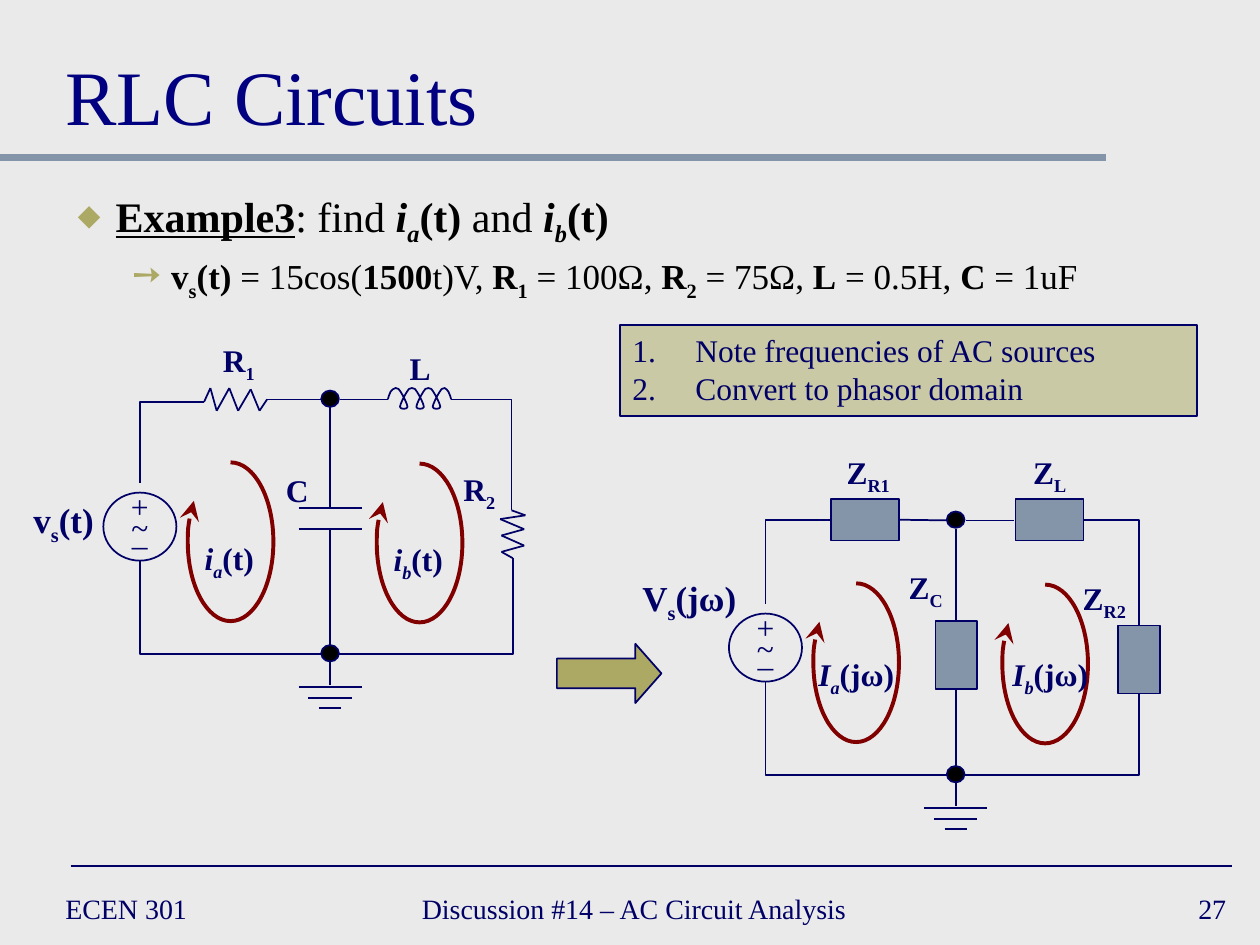
from dataclasses import dataclass
from itertools import pairwise
from math import cos, radians, sin, tan
from typing import Any, NamedTuple

from lxml.etree import SubElement
from pptx import Presentation
from pptx.dml.color import RGBColor
from pptx.enum.shapes import MSO_CONNECTOR as Link, MSO_SHAPE as Kind
from pptx.enum.text import MSO_ANCHOR as Anchor, MSO_AUTO_SIZE as Fit, PP_ALIGN as Align
from pptx.oxml.ns import qn
from pptx.util import Inches, Pt

NAVY = RGBColor(0x00, 0x00, 0x66)
BLUE = RGBColor(0x00, 0x00, 0x80)
STEEL = RGBColor(0x84, 0x95, 0xA9)
OLIVE = RGBColor(0xAC, 0xA9, 0x64)
RED = RGBColor(0x80, 0x00, 0x00)
BLACK = RGBColor(0x00, 0x00, 0x00)
PALE = RGBColor(0xEA, 0xEA, 0xEA)
COLS, ROWS = 100, 75
CELL = Inches(0.1)
MARKS = {"b": ("bold", True), "i": ("italic", True), "u": ("underline", True)}

Point = tuple[float, float]
# Half a coil turn, from its peak down to the foot on the left
FALL = [(-0.2, 0), (-0.3, 0.1), (-0.4, 0.3), (-0.6, 0.6), (-0.95, 1.3), (-0.95, 1.5)]


class Run(NamedTuple):
    text: str
    marks: str = ""


class Label(NamedTuple):
    x: float
    y: float
    w: float
    runs: list[Run]
    size: float = 18


def sym(head: str, sub: str, tail: str = "", slant: str = "") -> list[Run]:
    """Bold symbol with a subscript; slant "i" makes head and subscript italic."""
    runs = [Run(head, "b" + slant), Run(sub, "bs" + slant)]
    return runs + [Run(tail, "b")] if tail else runs


def write(para: Any, runs: list[Run], size: float = 18, color: RGBColor = NAVY, **form: Any) -> None:
    for key, value in form.items():
        setattr(para, key, value)
    for text, marks in runs:
        run = para.add_run()
        run.text = text
        look = dict(MARKS[m] for m in marks if m in MARKS)
        for key, value in {"name": "Times New Roman", "size": Pt(size), **look}.items():
            setattr(run.font, key, value)
        run.font.color.rgb = color
        if "s" in marks:
            run.font._element.set("baseline", "-25000")


def bullet(para: Any, left: float, hang: float, char: str = "", share: int = 100) -> None:
    """Hang the paragraph on a coloured character, or on a number if none is given."""
    props = para._p.get_or_add_pPr()
    props.set("marL", str(Inches(left)))
    props.set("indent", str(-Inches(hang)))
    if char:
        tint = SubElement(props, qn("a:buClr"))
        SubElement(tint, qn("a:srgbClr"), val=str(OLIVE))
        SubElement(props, qn("a:buSzPct"), val=str(share * 1000))
        SubElement(props, qn("a:buChar"), char=char)
    else:
        SubElement(props, qn("a:buAutoNum"), type="arabicPeriod")


@dataclass
class Pen:
    """Draws in grid cells, moved by dx columns and dy rows."""
    shapes: Any
    dx: float = 0
    dy: float = 0

    def at(self, x: float, y: float) -> tuple[int, int]:
        return round((x + self.dx) * CELL), round((y + self.dy) * CELL)

    def lines(self, *dots: Point, color: RGBColor = NAVY, width: float = 1) -> None:
        for a, b in pairwise(dots):
            link = self.shapes.add_connector(Link.STRAIGHT, *self.at(*a), *self.at(*b))
            link.line.color.rgb = color
            link.line.width = Pt(width)
            SubElement(link._element.spPr, qn("a:effectLst"))

    def trace(self, dots: list[Point], color: RGBColor = NAVY, width: float = 1) -> Any:
        first, *rest = [self.at(*dot) for dot in dots]
        maker = self.shapes.build_freeform(*first)
        maker.add_line_segments(rest, close=False)
        shape = maker.convert_to_shape()
        style(shape, None, color, width)
        return shape

    def curve(self, dots: list[Point], color: RGBColor = NAVY, width: float = 1) -> Any:
        """Bezier outline: a start, then two handles and an end for each part."""
        shape = self.trace(dots, color, width)
        route = shape._element.spPr.find(".//" + qn("a:path"))
        steps = route.findall(qn("a:lnTo"))
        for n in range(0, len(steps), 3):
            bend = SubElement(route, qn("a:cubicBezTo"))
            for step in steps[n:n + 3]:
                bend.append(step[0])
                route.remove(step)
        return shape

    def box(self, kind: Kind, x: float, y: float, w: float, h: float,
            fill: RGBColor | None = None) -> Any:
        shape = self.shapes.add_shape(kind, *self.at(x, y), round(w * CELL), round(h * CELL))
        style(shape, fill)
        return shape

    def text(self, x: float, y: float, w: float, h: float, **form: Any) -> Any:
        frame = self.shapes.add_textbox(*self.at(x, y), round(w * CELL), round(h * CELL)).text_frame
        for key, value in {"word_wrap": True, **form}.items():
            setattr(frame, key, value)
        return frame

    def label(self, x: float, y: float, w: float, *rows: list[Run], size: float = 18) -> None:
        frame = self.text(x, y, w, 1 + 3 * len(rows), word_wrap=False, auto_size=Fit.SHAPE_TO_FIT_TEXT)
        for n, runs in enumerate(rows):
            write(frame.add_paragraph() if n else frame.paragraphs[0], runs, size, alignment=Align.CENTER)


def style(shape: Any, fill: RGBColor | None, color: RGBColor = NAVY, width: float = 1) -> None:
    shape.shadow.inherit = False
    if fill is None:
        shape.fill.background()
    else:
        shape.fill.solid()
        shape.fill.fore_color.rgb = fill
    shape.line.color.rgb = color
    shape.line.width = Pt(width)


def mesh(pen: Pen, x: float, y: float) -> None:
    """Clockwise loop-current arrow round the centre x, y."""
    dots = [(x, y - 6.3)]
    for a, b in pairwise(map(radians, (-90, 0, 90, 180, 211))):
        k = 4 / 3 * tan((b - a) / 4)
        ring = ((cos(a) - k * sin(a), sin(a) + k * cos(a)),
                (cos(b) + k * sin(b), sin(b) - k * cos(b)), (cos(b), sin(b)))
        dots += [(x + 3.4 * c, y + 6.3 * s) for c, s in ring]
    line = pen.curve(dots, RED, 2.25)._element.spPr.find(qn("a:ln"))
    SubElement(line, qn("a:tailEnd"), type="stealth", w="lg", len="lg")


def coil(pen: Pen, x: float, y: float) -> None:
    """Inductor with four peaks, five cells long, drawn from its right end x."""
    top = y - 0.9
    dots = [(x, y), (x, y - 0.1), (x - 0.1, y - 0.4), (x - 0.2, y - 0.6),
            (x - 0.3, y - 0.7), (x - 0.4, top), (x - 0.5, top)]
    for n in range(3):
        peak = x - 0.5 - 1.3 * n
        dots += [(peak + a, top + b) for a, b in FALL]
        dots += [(peak - 0.95, top + 1.7), (peak - 0.35, top + 1.7)]
        dots += [(peak - 1.3 - a, top + b) for a, b in reversed(FALL)]
        dots.append((peak - 1.3, top))
    pen.curve(dots + [(2 * x - 5 - a, b) for a, b in reversed(dots[:6])])


def frame(pen: Pen) -> None:
    """Parts both circuits share: source, ground, nodes and mesh arrows."""
    pen.trace([(25.5, 51.9), (11.1, 51.9), (11.1, 44.5)])
    for half, y in (2.5, 54.5), (1.73, 55.4), (0.87, 56.2):
        pen.lines((26.2 - half, y), (26.2 + half, y))
    pen.lines((26.2, 51.9), (26.2, 54.4))
    pen.lines((27, 31.7), (30.8, 31.7))
    for y in 31, 51.2:
        pen.box(Kind.OVAL, 25.5, y, 1.4, 1.3, BLACK)
    pen.box(Kind.OVAL, 8.2, 39.1, 5.8, 5.4)
    pen.label(9.4, 38.2, 3.4, [Run("+")], [Run("–")])
    pen.label(9.4, 39.8, 3.4, [Run("~")])
    mesh(pen, 18.3, 43)
    mesh(pen, 33.3, 43.1)


def tag(pen: Pen, labels: list[Label]) -> None:
    for x, y, w, runs, size in labels:
        pen.label(x, y, w, runs, size=size)


def timed(pen: Pen) -> None:
    """Time-domain circuit."""
    frame(pen)
    pen.trace([(16.2, 31.9), (11.1, 31.9), (11.1, 38.3)])
    pen.lines((16.2, 31.9), (16.7, 30.8), (17.2, 32.6), (18.2, 30.8), (18.9, 32.6),
              (19.9, 30.9), (20.6, 32.6), (21.2, 31.7), (25.5, 31.7))
    coil(pen, 35.8, 31.7)
    pen.trace([(35.8, 31.7), (40.6, 31.7), (40.6, 40.5)])
    pen.lines((40.6, 40.5), (41.7, 40.9), (39.7, 41.2), (41.6, 42), (39.8, 42.5),
              (41.6, 43.3), (39.8, 43.8), (40.7, 44.3))
    pen.trace([(26.9, 51.9), (40.7, 51.9), (40.7, 44.3)])
    for y, end in (40.3, 32.3), (42, 51.2):
        pen.lines((23.7, y), (28.7, y))
        pen.lines((26.2, y), (26.2, end))
    tag(pen, [Label(16, 26.6, 5.3, sym(" R", "1")), Label(31.5, 27.2, 3.7, [Run("L", "b")]),
              Label(35.7, 36.8, 4.7, sym("R", "2")), Label(21.7, 36.9, 3.8, [Run("C", "b")]),
              Label(1.6, 39.1, 6.9, sym("v", "s", "(t)"), 20),
              Label(15.2, 42.3, 6, sym("i", "a", "(t)", "i")),
              Label(30.2, 42.4, 6, sym("i", "b", "(t)", "i"))])


def phasor(pen: Pen) -> None:
    """Phasor-domain circuit, with impedance blocks."""
    frame(pen)
    pen.trace([(16.3, 31.65), (11.1, 31.65), (11.1, 38.3)])
    pen.lines((21.7, 31.65), (25.5, 31.7))
    pen.trace([(36.4, 31.7), (40.75, 31.7), (40.75, 40.1)])
    pen.trace([(26.9, 51.9), (40.75, 51.9), (40.75, 45.4)])
    pen.lines((26.25, 32.4), (26.25, 39.7))
    pen.lines((26.25, 45.1), (26.25, 51.2))
    for x in 16.3, 30.95:
        pen.box(Kind.RECTANGLE, x, 30, 5.4, 3.3, STEEL)
    for x, y in (24.6, 39.7), (39.1, 40.05):
        pen.box(Kind.RECTANGLE, x, y, 3.3, 5.4, STEEL)
    tag(pen, [Label(15.8, 25.9, 6.3, sym(" Z", "R1")), Label(30.65, 25.9, 5.4, sym(" Z", "L")),
              Label(20.75, 35, 5.5, sym(" Z", "C")), Label(35.15, 35.9, 5.7, sym("Z", "R2")),
              Label(0.3, 35.7, 9.5, sym("V", "s", "(jω)"), 20),
              Label(14.25, 41.9, 8.1, sym("I", "a", "(jω)", "i")),
              Label(29.65, 41.9, 8.1, sym("I", "b", "(jω)", "i"))])


def main() -> None:
    deck = Presentation()
    deck.slide_width, deck.slide_height = COLS * CELL, ROWS * CELL
    slide = deck.slides.add_slide(deck.slide_layouts[6])
    slide.background.fill.solid()
    slide.background.fill.fore_color.rgb = PALE
    pen = Pen(slide.shapes)
    pen.lines((0, 12.5), (87.8, 12.5), color=STEEL, width=4)
    pen.lines((5.6, 68.75), (97.8, 68.75))
    for x, w, words, side in ((4.2, 21.7, "ECEN 301", Align.LEFT),
                              (32.5, 38.3, "Discussion #14 – AC Circuit Analysis", Align.LEFT),
                              (77.5, 20.8, "27", Align.RIGHT)):
        foot = pen.text(x, 70, w, 4.2, vertical_anchor=Anchor.MIDDLE)
        write(foot.paragraphs[0], [Run(words)], 16, alignment=side)
    title = pen.text(4.2, 1.7, 91.7, 10, vertical_anchor=Anchor.BOTTOM)
    write(title.paragraphs[0], [Run("RLC Circuits")], 44, BLUE)

    body = pen.text(4.4, 14.6, 91.4, 11.2)
    task, given = body.paragraphs[0], body.add_paragraph()
    bullet(task, 0.38, 0.3, "◆", 70)
    write(task, [Run("Example3", "bu"), Run(": find "), *sym("i", "a", "(t)", "i"),
                 Run(" and "), *sym("i", "b", "(t)", "i")], 24, BLACK)
    bullet(given, 0.82, 0.31, "➙")
    write(given, [*sym("v", "s", "(t) "), Run("= 15cos("), Run("1500", "b"), Run("t)V, "),
                  *sym("R", "1"), Run(" = 100Ω, "), *sym("R", "2"), Run(" = 75Ω, "),
                  Run("L", "b"), Run(" = 0.5H, "), Run("C ", "b"), Run("= 1uF")],
          20, BLACK, space_before=Pt(4))

    timed(Pen(slide.shapes.add_group_shape().shapes))
    note = pen.box(Kind.RECTANGLE, 49.2, 25.8, 45.8, 7.2, OLIVE)
    SubElement(note._element.spPr.find(".//" + qn("a:srgbClr")), qn("a:alpha"), val="50000")
    steps = note.text_frame
    steps.word_wrap, steps.vertical_anchor = True, Anchor.TOP
    for n, words in enumerate(("Note frequencies of AC sources", "Convert to phasor domain")):
        para = steps.add_paragraph() if n else steps.paragraphs[0]
        bullet(para, 0.5, 0.5)
        write(para, [Run(words)], alignment=Align.LEFT)
    phasor(Pen(slide.shapes.add_group_shape().shapes, 49.65, 9.6))
    arrow = pen.box(Kind.RIGHT_ARROW, 44.2, 51.1, 8.3, 4.7, OLIVE)
    arrow.adjustments[1] = 0.44
    deck.save("out.pptx")


if __name__ == "__main__":
    main()
